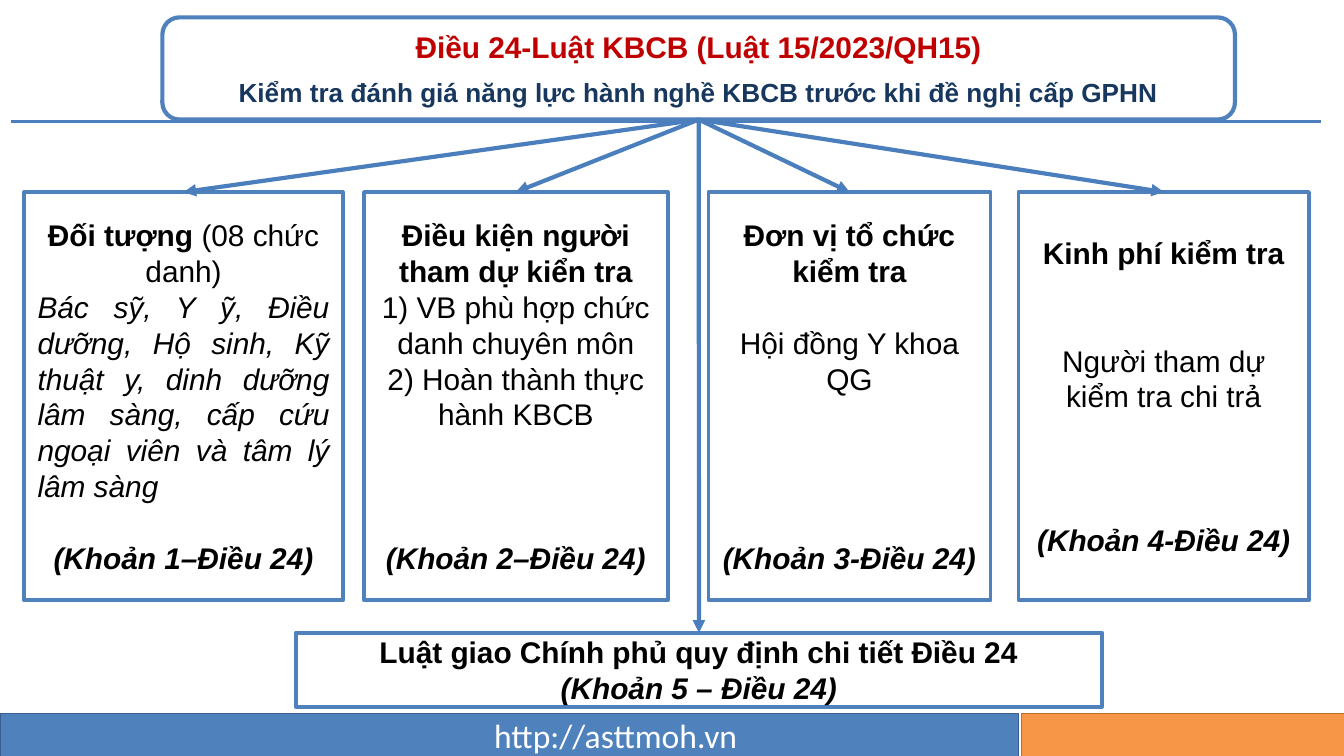
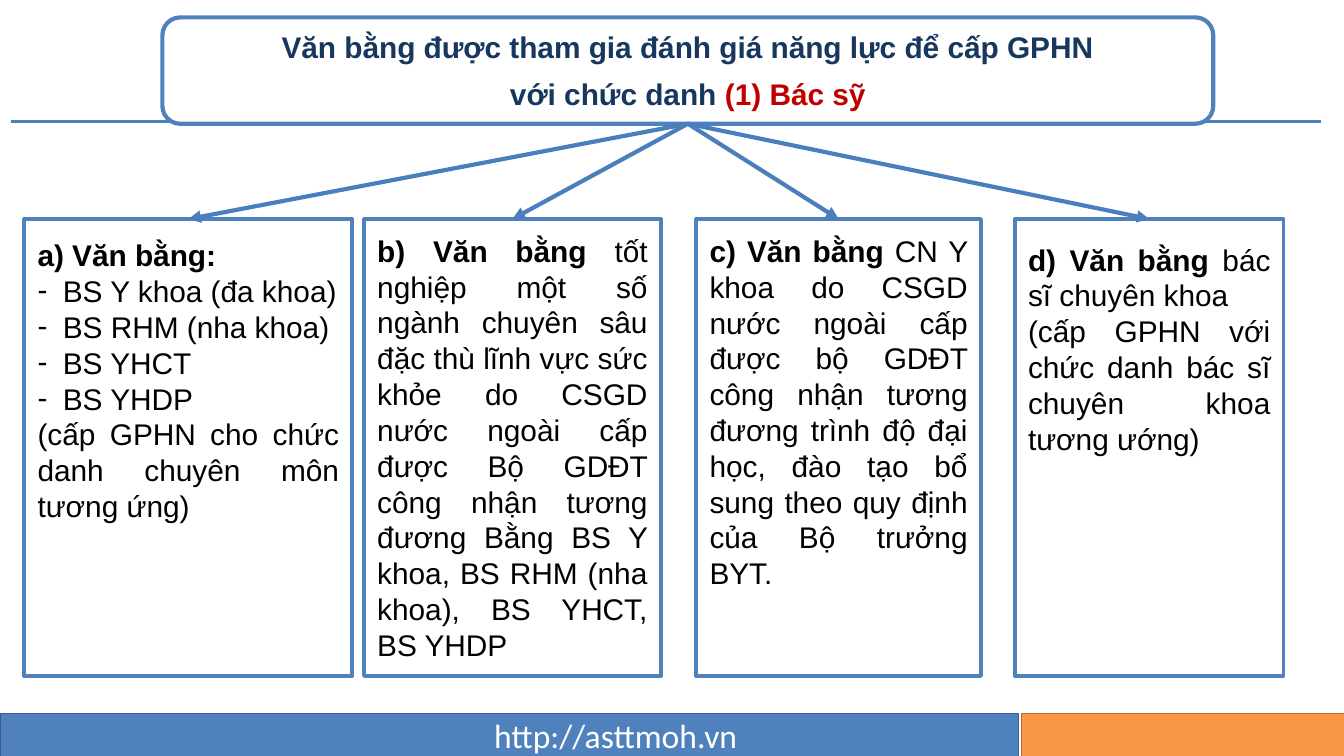
from lxml import etree
from pptx import Presentation
from pptx.dml.color import RGBColor
from pptx.enum.shapes import MSO_CONNECTOR, MSO_SHAPE
from pptx.enum.text import MSO_ANCHOR, MSO_AUTO_SIZE, PP_ALIGN
from pptx.oxml.ns import qn
from pptx.util import Cm, Pt

RECT, ROUND = MSO_SHAPE.RECTANGLE, MSO_SHAPE.ROUNDED_RECTANGLE
STRAIGHT = MSO_CONNECTOR.STRAIGHT
MIDDLE = MSO_ANCHOR.MIDDLE
C, J = PP_ALIGN.CENTER, PP_ALIGN.JUSTIFY
rgb = RGBColor.from_string

BLUE, LINE_BLUE, ORANGE, WHITE = "4F81BD", "4B7EBC", "F79646", "FFFFFF"
BLACK, RED, NAVY = "000000", "C00000", "17375E"
TOP, BOTTOM = 0, 2
INSET = 0.13
ROW = 19.2
BULLET = 0.48

STYLES = {
    "plain": (16, False, False, BLACK),
    "bold": (16, True, False, BLACK),
    "italic": (16, False, True, BLACK),
    "note": (16, True, True, BLACK),
    "red": (16, True, False, RED),
    "navy": (16, True, False, NAVY),
    "navy small": (14, True, False, NAVY),
}

SLIDES = [
    {
        "title": (20.27, 1.93, [
            (C, 0, [("Điều 24-Luật KBCB (Luật 15/2023/QH15)", "red")]),
            (C, 6, [("Kiểm tra đánh giá năng lực hành nghề KBCB trước khi đề nghị cấp GPHN", "navy small")]),
        ]),
        "top": 3.63,
        "height": 7.72,
        "boxes": [
            (0.46, 6.02, 0, [
                (C, 0, [("Đối tượng ", "bold"), ("(08 chức danh)", "plain")]),
                (J, 0, [("Bác sỹ, Y ỹ, Điều dưỡng, Hộ sinh, Kỹ thuật y, dinh dưỡng lâm sàng, "
                         "cấp cứu ngoại viên và tâm lý lâm sàng", "italic")]),
                (C, ROW, [("(Khoản 1–Điều 24)", "note")]),
            ]),
            (6.88, 5.74, 0, [
                (C, 0, [("Điều kiện người tham dự kiển tra", "bold")]),
                (C, 0, [("1) VB phù hợp chức danh chuyên môn", "plain")]),
                (C, 0, [("2) Hoàn thành thực hành KBCB", "plain")]),
                (C, 3 * ROW, [("(Khoản 2–Điều 24)", "note")]),
            ]),
            (13.39, 5.33, 0, [
                (C, 0, [("Đơn vị tổ chức kiểm tra", "bold")]),
                (C, ROW, [("Hội đồng Y khoa QG", "plain")]),
                (C, 4 * ROW, [("(Khoản 3-Điều 24)", "note")]),
            ]),
            (19.25, 5.49, 0, [
                (C, 0, [("Kinh phí kiểm tra", "bold")]),
                (C, 2 * ROW, [("Người tham dự kiểm tra chi trả", "plain")]),
                (C, 3 * ROW, [("(Khoản 4-Điều 24)", "note")]),
            ]),
        ],
        "conclusion": [
            (C, 0, [("Luật giao Chính phủ quy định chi tiết Điều 24", "bold")]),
            (C, 0, [("(Khoản 5 – Điều 24)", "note")]),
        ],
    },
    {
        "title": (19.86, 2.01, [
            (C, 0, [("Văn bằng được tham gia đánh giá năng lực để cấp GPHN", "navy")]),
            (C, 6, [("với chức danh ", "navy"), ("(1) Bác sỹ", "red")]),
        ]),
        "top": 4.14,
        "height": 8.64,
        "boxes": [
            (0.46, 6.2, 2.54, [
                (J, 0, [("a) Văn bằng:", "bold")]),
                ("bullet", 0, [("BS Y khoa (đa khoa)", "plain")]),
                ("bullet", 0, [("BS RHM (nha khoa)", "plain")]),
                ("bullet", 0, [("BS YHCT", "plain")]),
                ("bullet", 0, [("BS YHDP", "plain")]),
                (J, 0, [("(cấp GPHN cho chức danh chuyên môn tương ứng)", "plain")]),
            ]),
            (6.88, 5.61, 0, [
                (J, 0, [("b) Văn bằng ", "bold"),
                        ("tốt nghiệp một số ngành chuyên sâu đặc thù lĩnh vực sức khỏe do CSGD "
                         "nước ngoài cấp được Bộ GDĐT công nhận tương đương Bằng BS Y khoa, "
                         "BS RHM (nha khoa), BS YHCT, BS YHDP", "plain")]),
            ]),
            (13.16, 5.38, 1.35, [
                (J, 0, [("c) Văn bằng ", "bold"),
                        ("CN Y khoa do CSGD nước ngoài cấp được bộ GDĐT công nhận tương đương "
                         "trình độ đại học, đào tạo bổ sung theo quy định của Bộ trưởng BYT.", "plain")]),
            ]),
            (19.18, 5.08, 3.73, [
                (J, 0, [("d) Văn bằng ", "bold"), ("bác sĩ chuyên khoa", "plain")]),
                (J, 0, [("(cấp GPHN với chức danh bác sĩ chuyên khoa tương ướng)", "plain")]),
            ]),
        ],
        "conclusion": None,
    },
]


def add_box(slide, kind, left, top, width, height, fill, line, weight, paragraphs=(), reserve=0):
    sp = slide.shapes.add_shape(kind, Cm(left), Cm(top), Cm(width), Cm(height))
    sp.shadow.inherit = False
    sp.fill.solid()
    sp.fill.fore_color.rgb = rgb(fill)
    sp.line.color.rgb = rgb(line)
    sp.line.width = Pt(weight)
    tf = sp.text_frame
    tf.word_wrap = True
    tf.vertical_anchor = MIDDLE
    tf.margin_bottom = Cm(INSET + reserve)
    for i, (align, gap, runs) in enumerate(paragraphs):
        p = tf.paragraphs[0] if i == 0 else tf.add_paragraph()
        if align == "bullet":
            pPr = p._p.get_or_add_pPr()
            pPr.set("marL", str(Cm(BULLET)))
            pPr.set("indent", str(-Cm(BULLET)))
            etree.SubElement(pPr, qn("a:buFont")).set("typeface", "Arial")
            etree.SubElement(pPr, qn("a:buChar")).set("char", "-")
        p.alignment = J if align == "bullet" else align
        if gap:
            p.space_before = Pt(gap)
        for text, style in runs:
            size, bold, italic, color = STYLES[style]
            r = p.add_run()
            r.text = text
            r.font.name = "Arial"
            r.font.size = Pt(size)
            r.font.bold = bold
            r.font.italic = italic
            r.font.color.rgb = rgb(color)
    return sp


def add_line(slide, x1, y1, x2, y2, weight):
    cxn = slide.shapes.add_connector(STRAIGHT, Cm(x1), Cm(y1), Cm(x2), Cm(y2))
    cxn.line.color.rgb = rgb(LINE_BLUE)
    cxn.line.width = Pt(weight)
    etree.SubElement(cxn._element.spPr, qn("a:effectLst"))
    return cxn


prs = Presentation()
prs.slide_width, prs.slide_height = Cm(25.4), Cm(14.29)

for content in SLIDES:
    slide = prs.slides.add_slide(prs.slide_layouts[6])

    add_box(slide, RECT, 0, 13.49, 19.25, 0.8, BLUE, "3A5F8C", 0.25)
    add_box(slide, RECT, 19.3, 13.49, 6.1, 0.8, ORANGE, "B76F34", 0.25)
    tb = slide.shapes.add_textbox(Cm(9.09), Cm(13.39), Cm(5.18), Cm(1.02))
    tf = tb.text_frame
    tf.word_wrap = False
    tf.auto_size = MSO_AUTO_SIZE.SHAPE_TO_FIT_TEXT
    tf.text = "http://asttmoh.vn"
    r = tf.paragraphs[0].runs[0]
    r.font.name = "Calibri"
    r.font.size = Pt(18)
    r.font.color.rgb = rgb(WHITE)
    add_line(slide, 0.2, 2.29, 24.97, 2.29, 1.5)

    width, height, paragraphs = content["title"]
    title = add_box(slide, ROUND, 3.07, 0.33, width, height, WHITE, BLUE, 2.25, paragraphs)

    targets = []
    for left, width, reserve, paragraphs in content["boxes"]:
        targets.append(add_box(slide, RECT, left, content["top"], width, content["height"],
                               WHITE, BLUE, 2, paragraphs, reserve))
    if content["conclusion"]:
        targets.append(add_box(slide, RECT, 5.59, 11.96, 15.24, 1.4,
                               WHITE, BLUE, 2, content["conclusion"]))

    for target in targets:
        arrow = add_line(slide, 0, 0, 1, 1, 2.25)
        arrow.begin_connect(title, BOTTOM)
        arrow.end_connect(target, TOP)
        etree.SubElement(arrow.line._get_or_add_ln(), qn("a:tailEnd")).set("type", "triangle")

prs.save("out.pptx")
